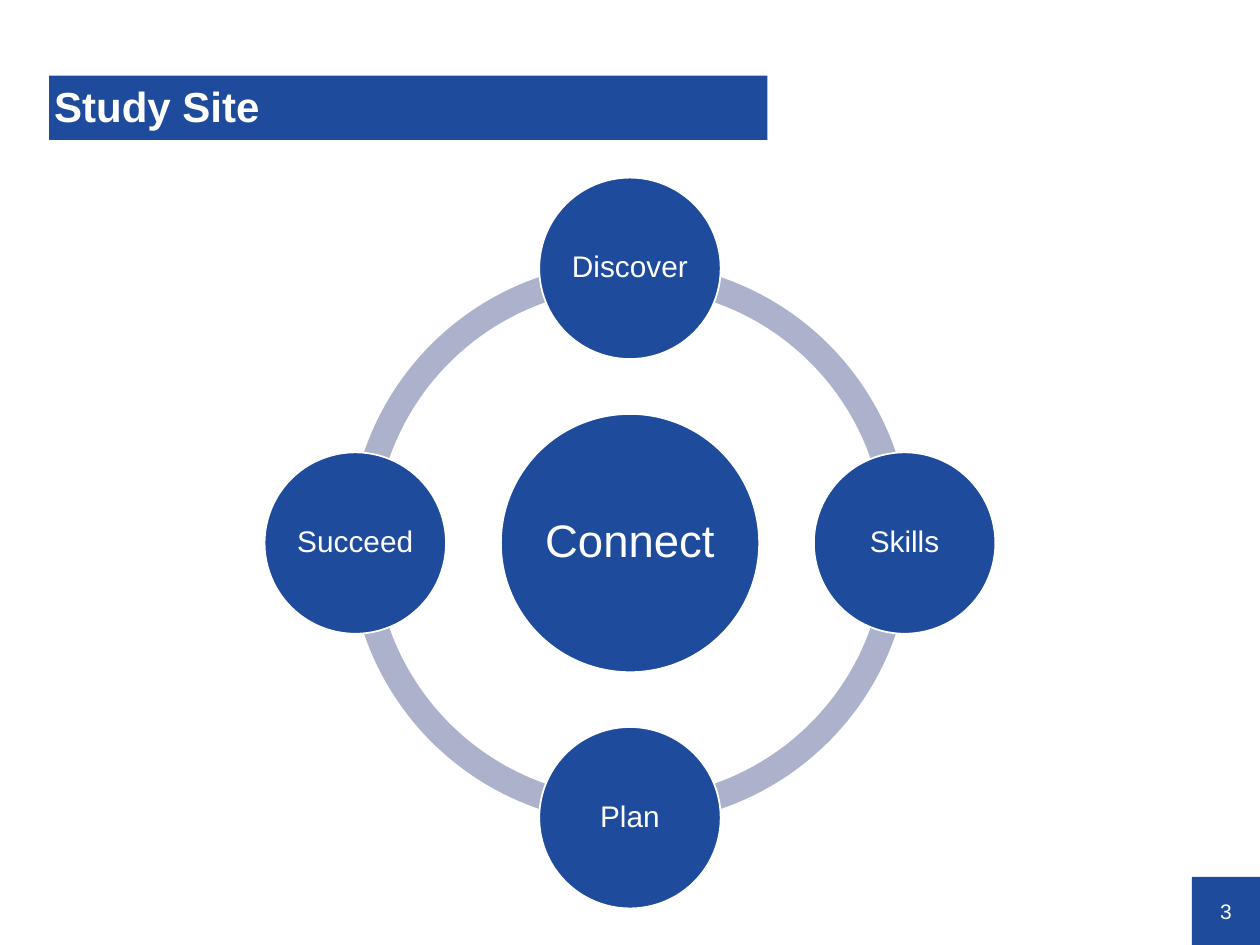
from math import cos, radians, sin

from pptx import Presentation
from pptx.dml.color import RGBColor
from pptx.enum.shapes import MSO_SHAPE
from pptx.enum.text import MSO_ANCHOR, PP_ALIGN
from pptx.util import Inches, Pt

BLUE = RGBColor(0x1E, 0x4B, 0x9B)
RING = RGBColor(0xAC, 0xB2, 0xCB)
WHITE = RGBColor(0xFF, 0xFF, 0xFF)
RECTANGLE, OVAL, ARC = MSO_SHAPE.RECTANGLE, MSO_SHAPE.OVAL, MSO_SHAPE.BLOCK_ARC
LEFT, CENTER = PP_ALIGN.LEFT, PP_ALIGN.CENTER
MIDDLE = MSO_ANCHOR.MIDDLE

presentation = Presentation()
presentation.slide_width, presentation.slide_height = Inches(10), Inches(7.5)
slide = presentation.slides.add_slide(presentation.slide_layouts[6])
UNIT = presentation.slide_width / 100  # all lengths are percent of slide width


def add_filled(kind, left, top, width, height, color, outlined=False):
    box = [round(length * UNIT) for length in (left, top, width, height)]
    shape = slide.shapes.add_shape(kind, *box)
    shape.shadow.inherit = False
    shape.fill.solid()
    shape.fill.fore_color.rgb = color
    if outlined:
        shape.line.color.rgb = WHITE
        shape.line.width = Pt(1)
    else:
        shape.line.fill.background()
    return shape


def write(shape, text, size, align=CENTER, bold=False, spacing=0.9, margins=(0, 0, 0, 0)):
    left, top, right, bottom = [round(margin * UNIT) for margin in margins]
    frame_format = {"margin_left": left, "margin_top": top, "margin_right": right,
                    "margin_bottom": bottom, "vertical_anchor": MIDDLE, "word_wrap": True}
    for name, value in frame_format.items():
        setattr(shape.text_frame, name, value)
    paragraph = shape.text_frame.paragraphs[0]
    paragraph.alignment, paragraph.line_spacing = align, spacing
    run = paragraph.add_run()
    run.text = text
    for name, value in {"name": "Arial", "size": Pt(size), "bold": bold}.items():
        setattr(run.font, name, value)
    run.font.color.rgb = WHITE


# Page number and title bar
page_number = add_filled(RECTANGLE, 94.6, 69.6, 5.4, 5.4, BLUE)
write(page_number, "3", 12, spacing=1.0)
title = add_filled(RECTANGLE, 3.9, 6, 57, 5.1, BLUE)
write(title, "Study Site", 24, LEFT, bold=True, margins=(0.4, 0.2, 0, 0))

# Ring of four quarter arcs
CENTER_X, CENTER_Y = 50, 43.1
RING_SIZE, HUB_SIZE, NODE_SIZE, ORBIT = 44.6, 20.5, 14.4, 21.8
DEGREE = 0.6  # adjustment value of one degree
for start in (180, 90, 0, 270):
    arc = add_filled(ARC, CENTER_X - RING_SIZE / 2, CENTER_Y - RING_SIZE / 2,
                     RING_SIZE, RING_SIZE, RING)
    arc.adjustments[0] = start * DEGREE
    arc.adjustments[1] = (start + 90) % 360 * DEGREE
    arc.adjustments[2] = 0.046

# Hub, then the nodes clockwise from the top
circles = [("Connect", 0, 0, HUB_SIZE, 26, 0.4)]
for index, label in enumerate(("Discover", "Skills", "Plan", "Succeed")):
    angle = radians(90 * index - 90)
    circles.append((label, ORBIT * cos(angle), ORBIT * sin(angle), NODE_SIZE, 17, 0.2))
for label, offset_x, offset_y, size, font_size, margin in circles:
    circle = add_filled(OVAL, CENTER_X + offset_x - size / 2, CENTER_Y + offset_y - size / 2,
                        size, size, BLUE, outlined=True)
    write(circle, label, font_size, margins=(margin,) * 4)

presentation.save("out.pptx")
